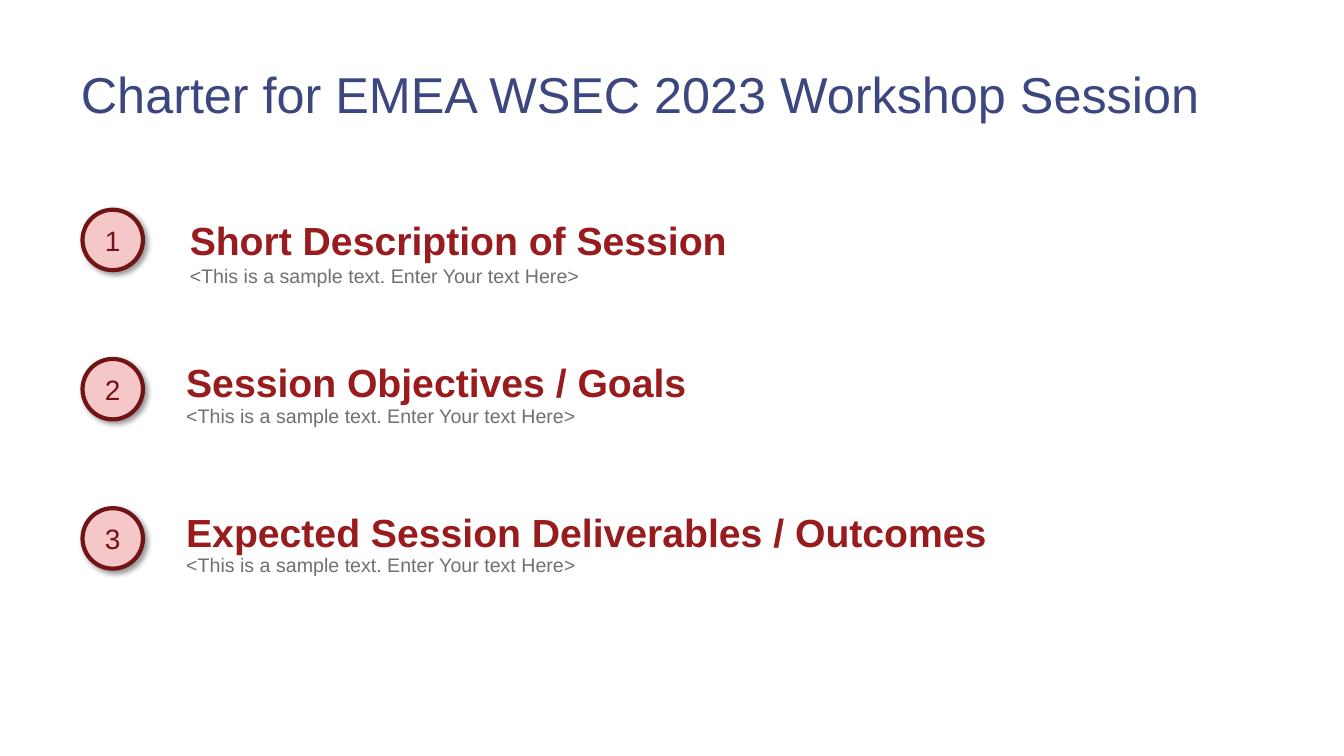
from copy import deepcopy

from lxml import etree
from pptx import Presentation
from pptx.dml.color import RGBColor
from pptx.enum.shapes import MSO_SHAPE
from pptx.enum.text import MSO_ANCHOR, MSO_AUTO_SIZE, PP_ALIGN
from pptx.oxml.ns import qn
from pptx.util import Pt

OVAL = MSO_SHAPE.OVAL
TOP, MIDDLE = MSO_ANCHOR.TOP, MSO_ANCHOR.MIDDLE
LEFT, CENTER = PP_ALIGN.LEFT, PP_ALIGN.CENTER
NO_FIT = MSO_AUTO_SIZE.NONE

COLORS = {"title": "3C4780", "heading": "981B1E", "note": "706F72",
          "badge": "F5C7C8", "ring": "721416", "shadow": "000000"}
SAMPLE = "<This is a sample text. Enter Your text Here>"
HEADINGS = ["Short Description of Session",
            "Session Objectives / Goals",
            "Expected Session Deliverables / Outcomes"]


class Charter:
    """Style and current slide."""
    font = "Arial"

    def __init__(self, prs):
        self.s = prs.slides.add_slide(prs.slide_layouts[1])

    def color(self, name):
        return RGBColor.from_string(COLORS[name])

    def place(self, sp, box):
        for name, value in zip(("left", "top", "width", "height"), box):
            setattr(sp, name, Pt(value))

    def frame(self, sp, anchor, inset_x, inset_y):
        tf = sp.text_frame
        values = {"word_wrap": True, "auto_size": NO_FIT, "vertical_anchor": anchor,
                  "margin_left": Pt(inset_x), "margin_right": Pt(inset_x),
                  "margin_top": Pt(inset_y), "margin_bottom": Pt(inset_y)}
        for name, value in values.items():
            setattr(tf, name, value)
        return tf.paragraphs[0]

    def run(self, p, text, size, color, bold=False):
        r = p.add_run()
        r.text = text
        for name, value in {"name": self.font, "size": Pt(size), "bold": bold}.items():
            setattr(r.font, name, value)
        r.font.color.rgb = self.color(color)
        return r

    def title(self, text, box):
        sp = self.s.shapes.title
        self.place(sp, box)
        p = self.frame(sp, MIDDLE, 9.6, 4.8)
        p.alignment = LEFT
        self.run(p, text, 36, "title")

    def entry(self, p, heading, note, spacing):
        p.space_before = Pt(0)
        p.line_spacing = spacing
        r = self.run(p, heading, 28, "heading", True)
        p.add_line_break()
        # The break takes the heading's size
        p._p[-1].append(deepcopy(r._r.get_or_add_rPr()))
        self.run(p, note, 14, "note")

    def body(self, heading, note, box):
        sp = self.s.placeholders[1]
        self.place(sp, box)
        p = self.frame(sp, TOP, 9.6, 4.8)
        pPr = p._p.get_or_add_pPr()
        pPr.set("marL", "0")
        pPr.set("indent", "0")
        etree.SubElement(pPr, qn("a:buNone"))
        self.entry(p, heading, note, 1.0)

    def text(self, heading, note, box):
        sp = self.s.shapes.add_textbox(*map(Pt, box))
        self.entry(self.frame(sp, TOP, 7.2, 3.6), heading, note, 0.9)

    def badge(self, number, left, top, size):
        sp = self.s.shapes.add_shape(OVAL, *map(Pt, (left, top, size, size)))
        sp.fill.solid()
        sp.fill.fore_color.rgb = self.color("badge")
        sp.line.color.rgb = self.color("ring")
        sp.line.width = Pt(3)
        self.shadow(sp)
        p = self.frame(sp, MIDDLE, 0, 0)
        p.alignment = CENTER
        self.run(p, str(number), 20, "ring")

    def shadow(self, sp):
        sp.shadow.inherit = False
        effects = sp._element.spPr.find(qn("a:effectLst"))
        outer = etree.SubElement(effects, qn("a:outerShdw"), blurRad=str(Pt(4)),
                                 dist=str(Pt(3)), dir=str(45 * 60000),
                                 algn="tl", rotWithShape="0")
        clr = etree.SubElement(outer, qn("a:srgbClr"), val=COLORS["shadow"])
        etree.SubElement(clr, qn("a:alpha"), val="40000")


def main():
    prs = Presentation()
    prs.slide_width, prs.slide_height = Pt(960.5), Pt(540)
    charter = Charter(prs)

    # Title
    charter.title("Charter for EMEA WSEC 2023 Workshop Session", (48.2, 21.6, 864.7, 90))

    # Numbered entries: the first fills the body placeholder
    for i, heading in enumerate(HEADINGS):
        top = 149.8 + i * 106.6
        charter.badge(i + 1, 59, top, 43.2)
        if i == 0:
            charter.body(heading, SAMPLE, (126, top, 815.8, 90.7))
        else:
            charter.text(heading, SAMPLE, (126, top, 828, 90.7))

    prs.save("out.pptx")


if __name__ == "__main__":
    main()
